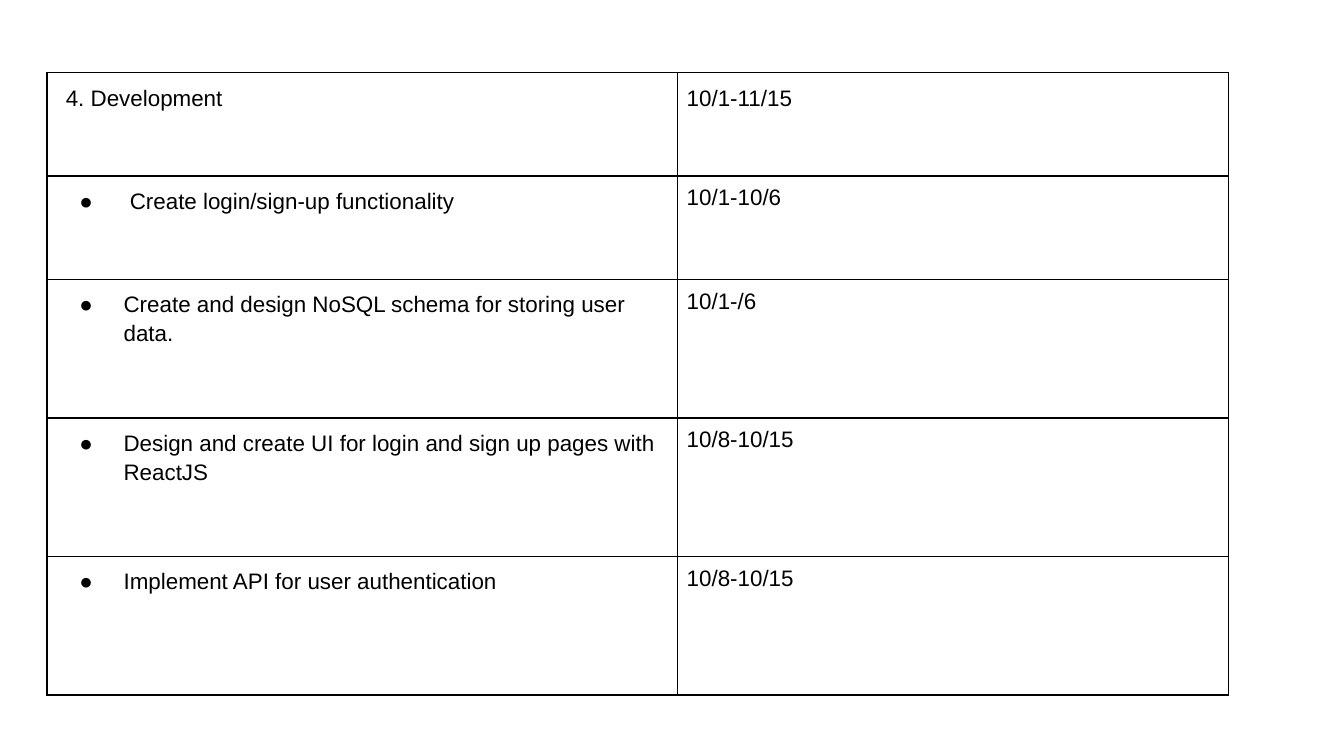
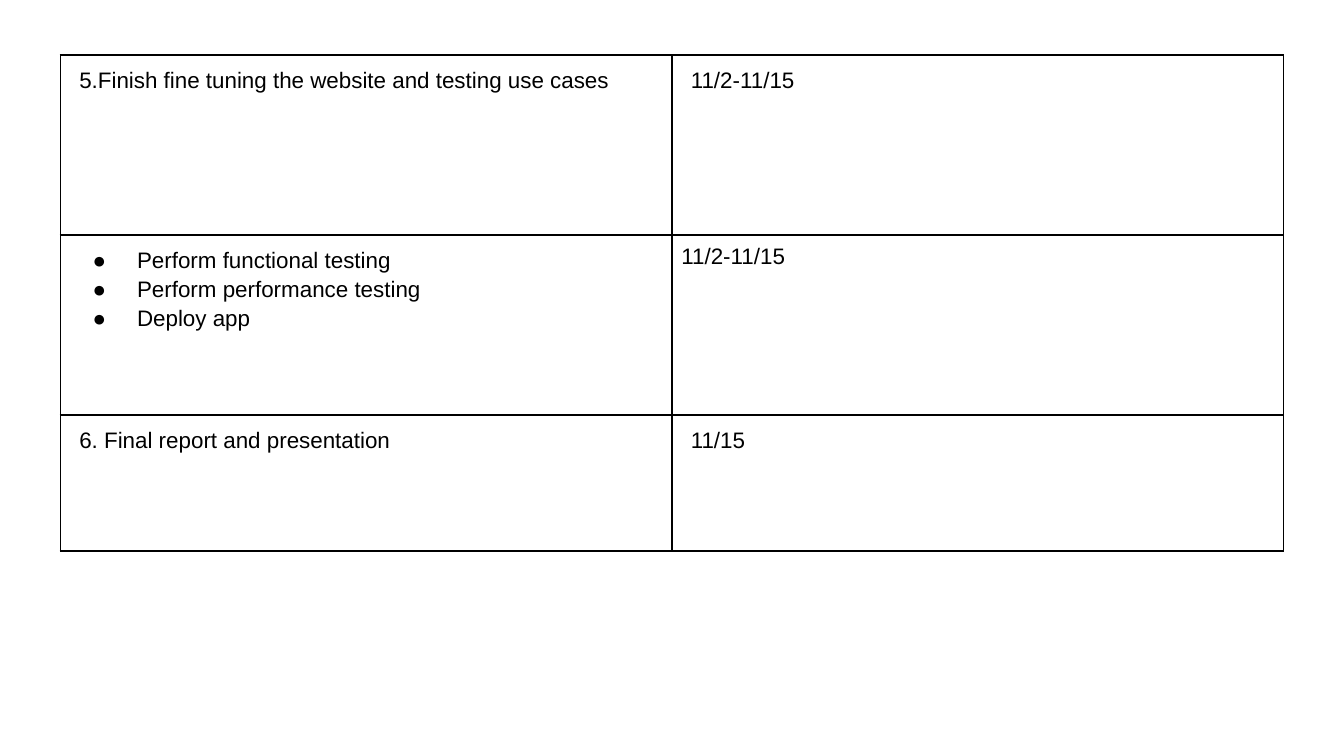
from lxml import etree
from pptx import Presentation
from pptx.dml.color import RGBColor
from pptx.oxml.ns import qn
from pptx.util import Inches, Pt

COLORS = {"ink": "000000", "paper": "FFFFFF"}
FONT = "Arial"
SIZE = Pt(12)
PAD = Inches(0.07)
WIDTH = Inches(10)
HEIGHT = WIDTH * 9 // 16
BLANK = 6

# Paragraph styles: left margin, first-line indent, line spacing,
# space before, space after, bullet
STYLES = {
    "head": (0.07, 0, 1.15, 12, 12, None),
    "flush": (0, 0, 1.15, 12, 12, None),
    "item": (0.5, -0.33, 1.15, 12, 0, "●"),
    "next": (0.5, -0.33, 1.15, 0, 0, "●"),
    "plain": (0, 0, 1, 0, 0, None),
}


def add_color(node):
    etree.SubElement(node, qn("a:srgbClr"), val=COLORS["ink"])


class Deck:
    def __init__(self):
        self.prs = Presentation()
        self.prs.slide_width = WIDTH
        self.prs.slide_height = HEIGHT
        self.slide = None

    def new_slide(self):
        layout = self.prs.slide_layouts[BLANK]
        self.slide = self.prs.slides.add_slide(layout)
        fill = self.slide.background.fill
        fill.solid()
        fill.fore_color.rgb = RGBColor.from_string(COLORS["paper"])

    def table(self, left, top, cols, rows):
        """Add a table; each row is (height, task cell, date cell)."""
        heights = [row[0] for row in rows]
        frame = self.slide.shapes.add_table(
            len(rows), len(cols), Inches(left), Inches(top),
            Inches(sum(cols)), Inches(sum(heights)))
        grid = frame.table
        grid.first_row = grid.horz_banding = False
        for col, width in zip(grid.columns, cols):
            col.width = Inches(width)
        for line, (height, *cells) in zip(grid.rows, rows):
            line.height = Inches(height)
            for cell, (style, text) in zip(line.cells, cells):
                self.cell(cell, style, text)

    def cell(self, cell, style, text):
        cell.margin_left = cell.margin_right = PAD
        cell.margin_top = cell.margin_bottom = PAD
        self.border(cell)
        cell.fill.background()
        cell.text_frame.text = text
        for i, para in enumerate(cell.text_frame.paragraphs):
            self.para(para, "next" if i and style == "item" else style)

    def border(self, cell):
        props = cell._tc.get_or_add_tcPr()
        for side in "LRTB":
            line = etree.SubElement(props, qn(f"a:ln{side}"), w=str(Pt(1)))
            add_color(etree.SubElement(line, qn("a:solidFill")))

    def para(self, para, style):
        left, indent, space, before, after, mark = STYLES[style]
        para.line_spacing = space
        para.space_before, para.space_after = Pt(before), Pt(after)
        props = para._p.get_or_add_pPr()
        props.set("marL", str(Inches(left)))
        props.set("indent", str(Inches(indent)))
        if mark:
            add_color(etree.SubElement(props, qn("a:buClr")))
            etree.SubElement(props, qn("a:buFont"), typeface=FONT)
            etree.SubElement(props, qn("a:buChar"), char=mark)
        for run in para.runs:
            run.font.name, run.font.size = FONT, SIZE
            run.font.color.rgb = RGBColor.from_string(COLORS["ink"])


def main():
    deck = Deck()

    deck.new_slide()
    deck.table(0.35, 0.54, (4.69, 4.1), [
        (0.77, ("head", "4. Development"), ("flush", "10/1-11/15")),
        (0.77, ("item", " Create login/sign-up functionality"),
         ("plain", "10/1-10/6")),
        (1.03, ("item", "Create and design NoSQL schema for storing "
                "user data."), ("plain", "10/1-/6")),
        (1.03, ("item", "Design and create UI for login and sign up "
                "pages with ReactJS"), ("plain", "10/8-10/15")),
        (1.03, ("item", "Implement API for user authentication"),
         ("plain", "10/8-10/15")),
    ])

    deck.new_slide()
    deck.table(0.45, 0.41, (4.55, 4.55), [
        (1.34, ("head", "5.Finish fine tuning the website and testing "
                "use cases"), ("head", "11/2-11/15")),
        (1.34, ("item", "Perform functional testing\n"
                "Perform performance testing\nDeploy app"),
         ("plain", "11/2-11/15")),
        (1.01, ("head", "6. Final report and presentation"),
         ("head", "11/15")),
    ])

    deck.prs.save("out.pptx")


if __name__ == "__main__":
    main()
